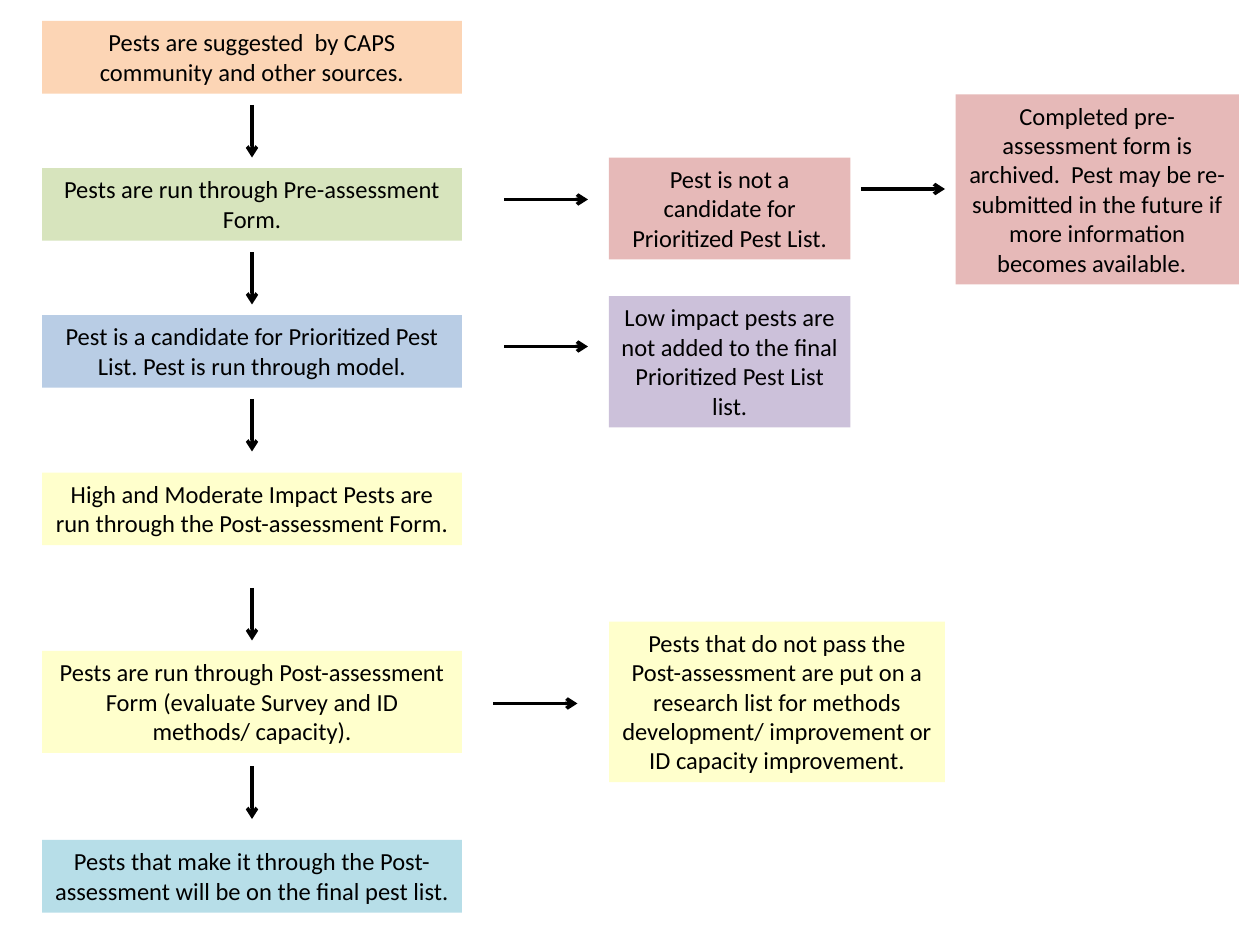
from lxml.etree import SubElement
from pptx import Presentation
from pptx.dml.color import RGBColor
from pptx.enum.shapes import MSO_CONNECTOR
from pptx.enum.text import MSO_AUTO_SIZE, PP_ALIGN
from pptx.oxml.ns import qn
from pptx.util import Inches, Pt

BLACK = RGBColor(0x00, 0x00, 0x00)
ORANGE = RGBColor(0xFC, 0xD5, 0xB5)
GREEN = RGBColor(0xD7, 0xE4, 0xBD)
BLUE = RGBColor(0xB9, 0xCD, 0xE5)
ROSE = RGBColor(0xE6, 0xB9, 0xB8)
YELLOW = RGBColor(0xFF, 0xFF, 0xCC)
PURPLE = RGBColor(0xCC, 0xC1, 0xDA)
AQUA = RGBColor(0xB7, 0xDE, 0xE8)

# The grid has twelve columns and twelve rows to the inch
STEP_LEFT, STEP_WIDTH = 4, 40
STEP_CENTER = STEP_LEFT + STEP_WIDTH / 2
OUTCOME_LEFT = 58
DOWN_LENGTH, ACROSS_LENGTH = 5, 8

# Main column: row, lines of text, fill, wording
STEPS = [
    (2, 2, ORANGE, "Pests are suggested  by CAPS community and other sources."),
    (16, 2, GREEN, "Pests are run through Pre-assessment Form."),
    (30, 2, BLUE, "Pest is a candidate for Prioritized Pest List. "
                  "Pest is run through model."),
    (45, 2, YELLOW, "High and Moderate Impact Pests are run through the "
                    "Post-assessment Form."),
    (62, 3, YELLOW, "Pests are run through Post-assessment Form "
                    "(evaluate Survey and ID methods/ capacity)."),
    (80, 2, AQUA, "Pests that make it through the Post-assessment will be "
                  "on the final pest list."),
]

# Side branches: column, row, width, lines of text, fill, wording
OUTCOMES = [
    (OUTCOME_LEFT, 15, 23, 3, ROSE,
     "Pest is not a candidate for Prioritized Pest List."),
    (91, 9, 27, 6, ROSE,
     "Completed pre-assessment form is archived.  Pest may be re-submitted "
     "in the future if more information becomes available.  "),
    (OUTCOME_LEFT, 28.2, 23, 4, PURPLE,
     "Low impact pests are not added to the final Prioritized Pest List list."),
    (OUTCOME_LEFT, 59.2, 32, 5, YELLOW,
     "Pests that do not pass the Post-assessment are put on a research list "
     "for methods development/ improvement or ID capacity improvement."),
]

DOWN_ROWS = [10, 24, 38, 56, 73]
ACROSS_STARTS = [(48, 19), (82, 18), (48, 33), (47, 67)]


def grid(units):
    return Inches(units / 12)


def text_height(lines):
    return Inches(0.11 + 0.233 * lines)


def write(frame, text, size=14, font="Calibri", color=BLACK,
          align=PP_ALIGN.CENTER):
    paragraph = frame.paragraphs[0]
    paragraph.alignment = align
    run = paragraph.add_run()
    run.text = text
    run.font.size = Pt(size)
    run.font.name = font
    run.font.color.rgb = color


def add_box(slide, column, row, width, lines, fill, text):
    box = slide.shapes.add_textbox(grid(column), grid(row), grid(width),
                                   text_height(lines))
    box.fill.solid()
    box.fill.fore_color.rgb = fill
    box.text_frame.word_wrap = True
    box.text_frame.auto_size = MSO_AUTO_SIZE.SHAPE_TO_FIT_TEXT
    write(box.text_frame, text)


def add_arrow(slide, column, row, across=0, down=0):
    arrow = slide.shapes.add_connector(
        MSO_CONNECTOR.STRAIGHT, grid(column), grid(row),
        grid(column + across), grid(row + down))
    arrow.line.color.rgb = BLACK
    arrow.line.width = Pt(2)
    SubElement(arrow.line._get_or_add_ln(), qn("a:tailEnd"), type="arrow")
    SubElement(arrow._element.spPr, qn("a:effectLst"))


def main():
    deck = Presentation()
    deck.slide_width, deck.slide_height = Inches(10), Inches(7.5)
    slide = deck.slides.add_slide(deck.slide_layouts[6])

    # Assessment steps and their outcomes
    for row, lines, fill, text in STEPS:
        add_box(slide, STEP_LEFT, row, STEP_WIDTH, lines, fill, text)
    for outcome in OUTCOMES:
        add_box(slide, *outcome)

    # Flow between the boxes
    for row in DOWN_ROWS:
        add_arrow(slide, STEP_CENTER, row, down=DOWN_LENGTH)
    for column, row in ACROSS_STARTS:
        add_arrow(slide, column, row, across=ACROSS_LENGTH)

    deck.save("out.pptx")


if __name__ == "__main__":
    main()
